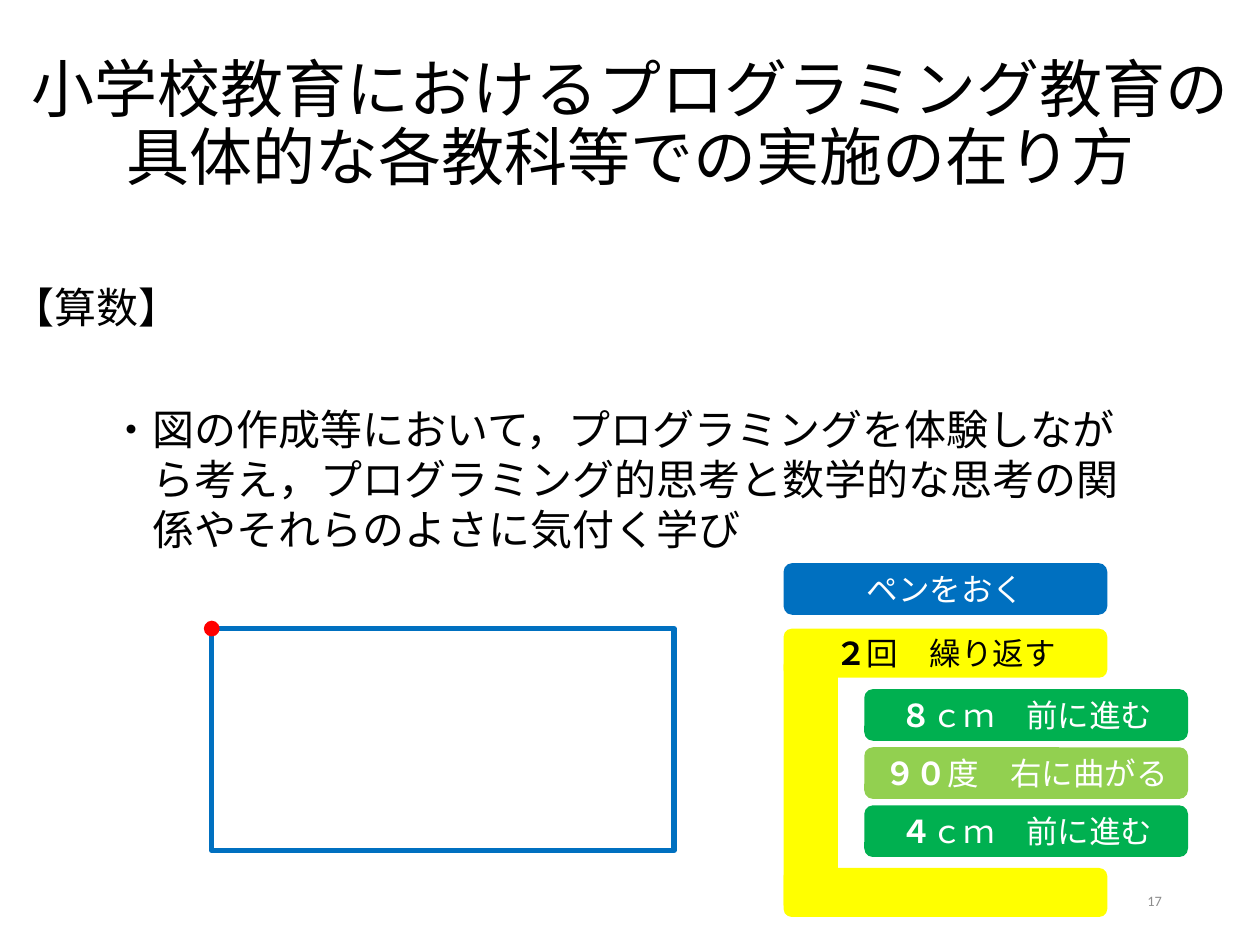
from lxml import etree
from pptx import Presentation
from pptx import util as u
from pptx.dml.color import RGBColor
from pptx.enum import shapes, text
from pptx.oxml.ns import qn

BLUE, GREEN, LIME, YELLOW, RED = "0070C0", "00B050", "92D050", "FFFF00", "FF0000"
BLACK, WHITE, GREY = "000000", "FFFFFF", "8C8C8C"
LEFT, CENTER, RIGHT = text.PP_ALIGN.LEFT, text.PP_ALIGN.CENTER, text.PP_ALIGN.RIGHT
MIDDLE, TOP = text.MSO_ANCHOR.MIDDLE, text.MSO_ANCHOR.TOP


def color(value):
    return RGBColor.from_string(value)


class SlideBuilder:
    japanese = "Noto Sans CJK JP"
    latin = "Calibri"

    def __init__(self, slide):
        self.slide = slide

    def style(self, frame, size, ink, font, align, anchor):
        frame.word_wrap = True
        frame.vertical_anchor = anchor
        for paragraph in frame.paragraphs:
            paragraph.alignment = align
            for run in paragraph.runs:
                run.font.size = u.Pt(size)
                run.font.name = font
                run.font.color.rgb = color(ink)
                east_asian = etree.SubElement(run.font._element, qn("a:ea"))
                east_asian.set("typeface", self.japanese)

    def title(self, words, box):
        title = self.slide.shapes.title
        title.left, title.top, title.width, title.height = map(u.Pt, box)
        title.text_frame.text = words
        title.text_frame.auto_size = text.MSO_AUTO_SIZE.NONE
        title.text_frame.paragraphs[0].line_spacing = 0.9
        self.style(title.text_frame, 36, BLACK, self.japanese, CENTER, MIDDLE)

    def label(self, words, box, size=24, ink=BLACK, font=japanese,
              align=LEFT, anchor=TOP, hanging=0):
        frame = self.slide.shapes.add_textbox(*map(u.Pt, box)).text_frame
        frame.text = words
        self.style(frame, size, ink, font, align, anchor)
        if hanging:
            properties = frame.paragraphs[0]._p.get_or_add_pPr()
            properties.set("marL", str(u.Pt(hanging)))
            properties.set("indent", str(-u.Pt(hanging)))

    def shape(self, kind, box, fill=None, line=None, weight=1):
        shape = self.slide.shapes.add_shape(kind, *map(u.Pt, box))
        shape.shadow.inherit = False
        if fill:
            shape.fill.solid()
            shape.fill.fore_color.rgb = color(fill)
        else:
            shape.fill.background()
        if line:
            shape.line.color.rgb = color(line)
            shape.line.width = u.Pt(weight)
        else:
            shape.line.fill.background()
        return shape

    def block(self, box, fill, number="", words="", ink=WHITE):
        block = self.shape(shapes.MSO_SHAPE.ROUNDED_RECTANGLE, box, fill)
        paragraph = block.text_frame.paragraphs[0]
        for part, bold in ((number, True), (words, False)):
            if part:
                run = paragraph.add_run()
                run.text = part
                run.font.bold = bold
        self.style(block.text_frame, 18, ink, self.latin, CENTER, MIDDLE)


def main():
    deck = Presentation()
    deck.slide_width, deck.slide_height = u.Pt(720), u.Pt(540)
    page = SlideBuilder(deck.slides.add_slide(deck.slide_layouts[5]))

    # Heading and lesson aim
    page.title("小学校教育におけるプログラミング教育の具体的な各教科等での実施の在り方",
               (0, 20, 720, 104.5))
    page.label("【算数】", (0, 157.5, 294.5, 36))
    page.label("・図の作成等において，プログラミングを体験しながら考え，"
               "プログラミング的思考と数学的な思考の関係やそれらのよさに気付く学び",
               (56, 226.8, 607, 94.3), hanging=24)

    # Drawn rectangle with the pen at its top-left corner
    corner_x, corner_y, pen = 121, 359.2, 8
    page.shape(shapes.MSO_SHAPE.RECTANGLE, (corner_x, corner_y, 264.2, 126.8),
               line=BLUE, weight=3)

    # Program blocks: start, then the steps inside the loop
    block_x, step_x, width, height = 447.8, 493.9, 185, 29.5
    page.block((block_x, 321.8, width, height), BLUE, words="ペンをおく")
    steps = [(GREEN, "８", "ｃｍ　前に進む"),
             (LIME, "９０", "度　右に曲がる"),
             (GREEN, "４", "ｃｍ　前に進む")]
    for row, (fill, number, words) in enumerate(steps):
        page.block((step_x, 393.8 + row * 33.2, width, height), fill, number, words)

    # Loop bracket
    page.block((block_x, 359.3, width, 28), YELLOW, "２", "回　繰り返す", BLACK)
    page.block((block_x, 375, 31, 147), YELLOW)
    page.block((block_x, 496, width, 28), YELLOW)

    # Pen position
    page.shape(shapes.MSO_SHAPE.OVAL,
               (corner_x - pen / 2, corner_y - pen / 2, pen, pen), RED, RED)

    # Page number
    page.label("17", (509, 500.4, 162, 28.8), 8.2, GREY, page.latin, RIGHT, MIDDLE)

    deck.save("out.pptx")


if __name__ == "__main__":
    main()
